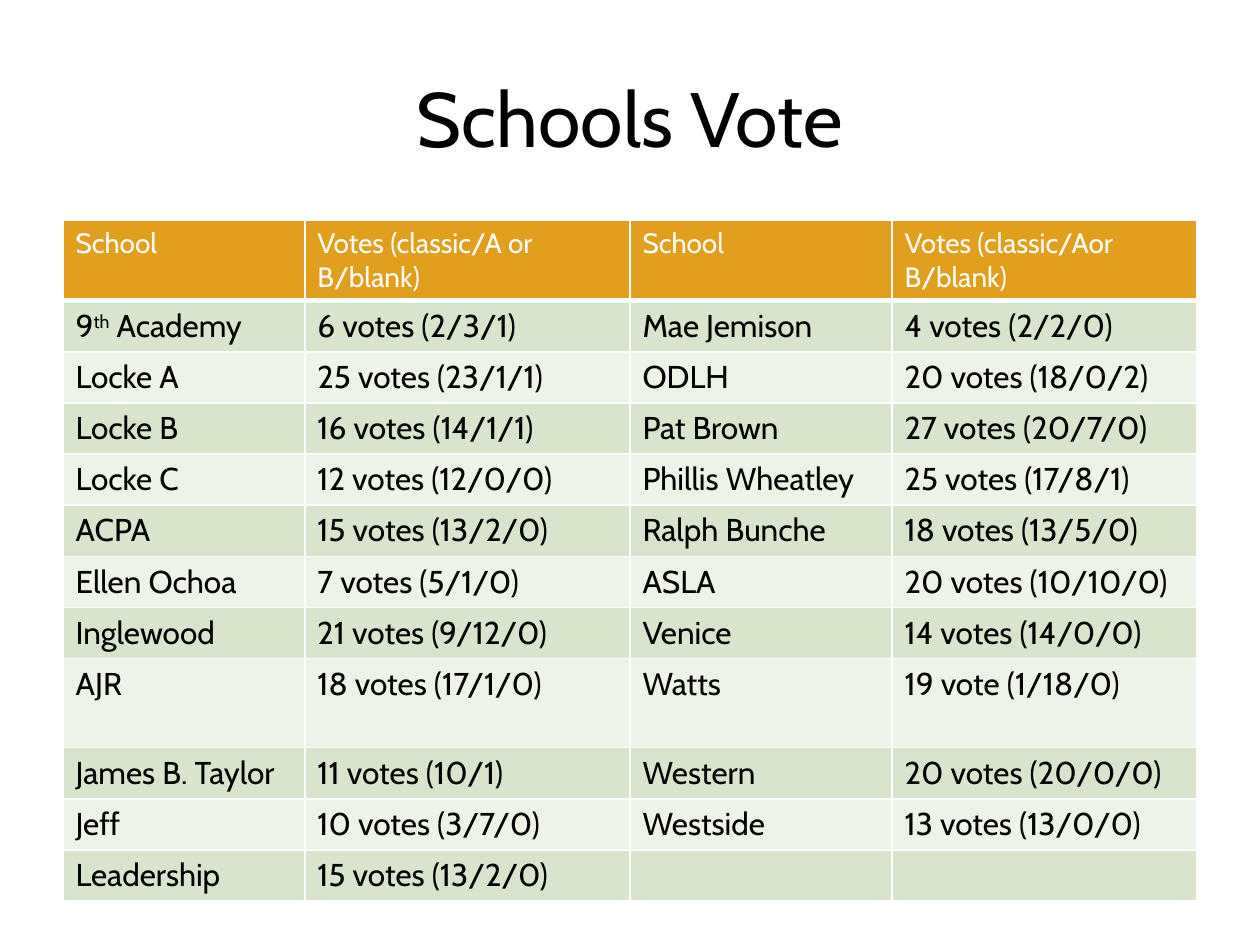
import pptx
import pptx.dml.color
import pptx.enum.text
import pptx.oxml
import pptx.oxml.ns
import pptx.util

RGBColor = pptx.dml.color.RGBColor
Inches, Pt = pptx.util.Inches, pptx.util.Pt

BLACK = RGBColor(0x00, 0x00, 0x00)
WHITE = RGBColor(0xFF, 0xFF, 0xFF)
ORANGE = RGBColor(0xE2, 0x9F, 0x1D)
GREEN = RGBColor(0xD8, 0xE5, 0xCC)
PALE_GREEN = RGBColor(0xED, 0xF3, 0xE7)

FONT = "Cabin"
WIDTH, HEIGHT = Inches(10), Inches(7.5)
MARGIN = 0.05  # share of the slide width

COLUMN_WIDTHS = [1.92, 2.58, 2.08, 2.42]  # inches
HEADER_HEIGHT, ROW_HEIGHT, TALL_HEIGHT = Pt(45.7), Pt(29.2), Pt(51)
TALL_SCHOOL = "AJR"

HEADERS = ["School", "Votes (classic/A or B/blank)",
           "School", "Votes (classic/Aor B/blank)"]
# Text between carets is superscript
VOTES = [
    ["9^th^ Academy", "6 votes (2/3/1)", "Mae Jemison", "4 votes (2/2/0)"],
    ["Locke A", "25 votes (23/1/1)", "ODLH", "20 votes (18/0/2)"],
    ["Locke B", "16 votes (14/1/1)", "Pat Brown", "27 votes (20/7/0)"],
    ["Locke C", "12 votes (12/0/0)", "Phillis Wheatley", "25 votes (17/8/1)"],
    ["ACPA", "15 votes (13/2/0)", "Ralph Bunche", "18 votes (13/5/0)"],
    ["Ellen Ochoa", "7 votes (5/1/0)", "ASLA", "20 votes (10/10/0)"],
    ["Inglewood", "21 votes (9/12/0)", "Venice", "14 votes (14/0/0)"],
    [TALL_SCHOOL, "18 votes (17/1/0)", "Watts", "19 vote (1/18/0)"],
    ["James B. Taylor", "11 votes (10/1)", "Western", "20 votes (20/0/0)"],
    ["Jeff", "10 votes (3/7/0)", "Westside", "13 votes (13/0/0)"],
    ["Leadership", "15 votes (13/2/0)", "", ""],
]


def format_font(font, size, color):
    font.name = FONT
    font.size = Pt(size)
    font.bold = False
    font.color.rgb = color


def add_title(slide, text):
    title = slide.shapes.title
    title.left, title.top = int(WIDTH * MARGIN), int(HEIGHT * 0.04)
    title.width, title.height = int(WIDTH * (1 - 2 * MARGIN)), Inches(1.25)
    frame = title.text_frame
    frame.text = text
    frame.vertical_anchor = pptx.enum.text.MSO_ANCHOR.MIDDLE
    frame.paragraphs[0].alignment = pptx.enum.text.PP_ALIGN.CENTER
    format_font(frame.paragraphs[0].runs[0].font, 44, BLACK)


def set_borders(cell, bottom):
    properties = cell._tc.get_or_add_tcPr()
    for side, points in (("L", 1), ("R", 1), ("T", 1), ("B", bottom)):
        properties.append(pptx.oxml.parse_xml(
            f'<a:ln{side} {pptx.oxml.ns.nsdecls("a")} w="{Pt(points)}">'
            f'<a:solidFill><a:srgbClr val="{WHITE}"/></a:solidFill></a:ln{side}>'))


def fill_cell(cell, text, size, color, fill, bottom=1):
    set_borders(cell, bottom)
    cell.fill.solid()
    cell.fill.fore_color.rgb = fill
    paragraph = cell.text_frame.paragraphs[0]
    format_font(paragraph.font, size, color)
    for index, part in enumerate(text.split("^")):
        if not part:
            continue
        run = paragraph.add_run()
        run.text = part
        format_font(run.font, size, color)
        if index % 2:
            run.font._element.set("baseline", "30000")


def add_votes_table(slide):
    heights = [HEADER_HEIGHT] + [
        TALL_HEIGHT if row[0] == TALL_SCHOOL else ROW_HEIGHT for row in VOTES]
    table = slide.shapes.add_table(
        len(heights), len(COLUMN_WIDTHS), int(WIDTH * MARGIN), Inches(1.75),
        Inches(sum(COLUMN_WIDTHS)), sum(heights)).table
    for column, width in zip(table.columns, COLUMN_WIDTHS):
        column.width = Inches(width)
    for row, height in zip(table.rows, heights):
        row.height = height

    # Header row
    for cell, text in zip(table.rows[0].cells, HEADERS):
        fill_cell(cell, text, 16, WHITE, ORANGE, bottom=3)

    # Banded rows of schools
    for number, texts in enumerate(VOTES, start=1):
        band = GREEN if number % 2 else PALE_GREEN
        for cell, text in zip(table.rows[number].cells, texts):
            fill_cell(cell, text, 18, BLACK, band)


def main():
    deck = pptx.Presentation()
    deck.slide_width, deck.slide_height = WIDTH, HEIGHT
    slide = deck.slides.add_slide(deck.slide_layouts[5])
    add_title(slide, "Schools Vote")
    add_votes_table(slide)
    deck.save("out.pptx")


if __name__ == "__main__":
    main()
